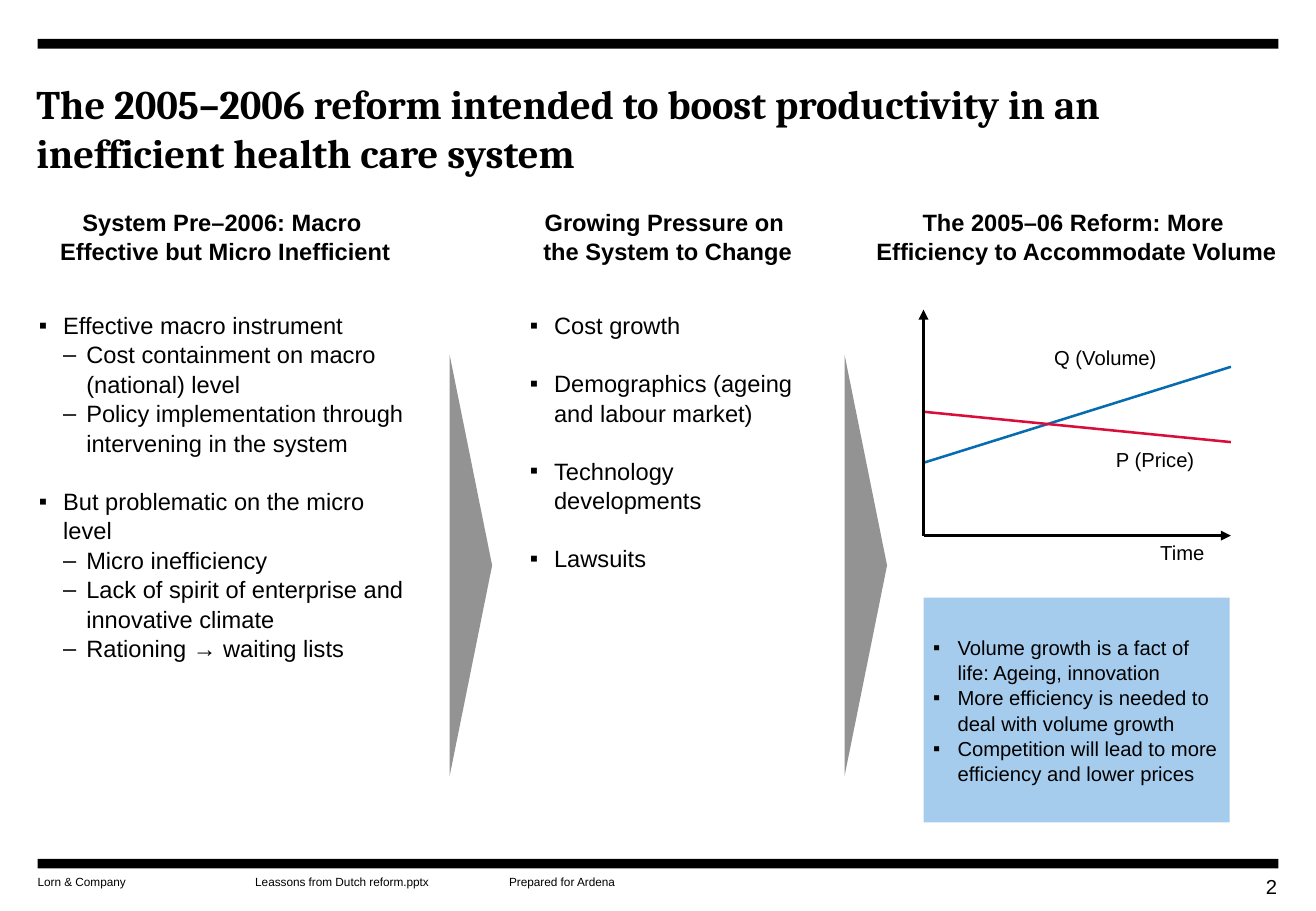
from lxml.etree import SubElement
from pptx import Presentation
from pptx.dml.color import RGBColor
from pptx.enum.shapes import MSO_CONNECTOR as Connector, MSO_SHAPE as Shape
from pptx.enum.text import MSO_ANCHOR as Anchor, PP_ALIGN as Align
from pptx.oxml.ns import qn
from pptx.util import Emu, Pt

EMU_PER_PX = 9144  # 100 px to the inch
BLACK, GREY, LIGHT_BLUE, BLUE, RED = "000000", "939393", "A5CCED", "066BB0", "D90D39"
BULLETS = [("▪", 20, 20), ("–", 39, 19)]  # character, left margin, hanging indent


def px(length):
    return Emu(length * EMU_PER_PX)


def color(hex_string):
    return RGBColor.from_string(hex_string)


def set_values(target, values):
    for name, value in values.items():
        setattr(target, name, value)


class SlideBuilder:
    font = "Arial"
    line_spacing = 1.04

    def __init__(self, slide):
        self.slide = slide

    def add_paragraphs(self, shape, paragraphs, size=14, bold=False, align=Align.LEFT,
                       anchor=Anchor.TOP, margins=(0, 0), wrap=True, font=None,
                       spacing=None):
        """Fill a shape; a paragraph is a text or (text, bullet level, space before in pt)."""
        across, down = map(px, margins)
        frame = shape.text_frame
        set_values(frame, {
            "margin_left": across, "margin_right": across,
            "margin_top": down, "margin_bottom": down,
            "vertical_anchor": anchor, "word_wrap": wrap,
        })
        for index, item in enumerate(paragraphs):
            paragraph = frame.add_paragraph() if index else frame.paragraphs[0]
            text, level, before = (item, None, 0) if isinstance(item, str) else item
            paragraph.text = text
            set_values(paragraph, {
                "alignment": align, "space_before": Pt(before),
                "line_spacing": spacing or self.line_spacing,
            })
            for run in paragraph.runs:
                set_values(run.font, {
                    "name": font or self.font, "size": Pt(size), "bold": bold})
                run.font.color.rgb = color(BLACK)
            if level is not None:
                self.bullet(paragraph, level)

    def bullet(self, paragraph, level):
        character, left, hanging = BULLETS[level]
        paragraph.level = level
        properties = paragraph._p.get_or_add_pPr()
        properties.set("marL", str(px(left)))
        properties.set("indent", str(-px(hanging)))
        SubElement(properties, qn("a:buFont")).set("typeface", self.font)
        SubElement(properties, qn("a:buChar")).set("char", character)

    def text(self, box, paragraphs, **style):
        shape = self.slide.shapes.add_textbox(*map(px, box))
        self.add_paragraphs(shape, paragraphs, **style)

    def shape(self, kind, box, fill, rotation=0):
        shape = self.slide.shapes.add_shape(kind, *map(px, box))
        shape.shadow.inherit = False
        shape.fill.solid()
        shape.fill.fore_color.rgb = color(fill)
        shape.line.fill.background()
        shape.rotation = rotation
        return shape

    def line(self, start, end, stroke, arrow=False):
        connector = self.slide.shapes.add_connector(
            Connector.STRAIGHT, *map(px, start + end))
        connector.line.color.rgb = color(stroke)
        connector.line.width = Pt(1.5)
        properties = connector._element.spPr
        if arrow:
            tail = SubElement(properties.find(qn("a:ln")), qn("a:tailEnd"))
            tail.set("type", "triangle")
        SubElement(properties, qn("a:effectLst"))


def main():
    presentation = Presentation()
    set_values(presentation, {"slide_width": px(1083), "slide_height": px(750)})
    builder = SlideBuilder(presentation.slides.add_slide(presentation.slide_layouts[6]))

    for top in (32, 707):
        builder.shape(Shape.RECTANGLE, (31, top, 1021, 8), BLACK)
    for left, width, footer in (
        (31, 76, "Lorn & Company"),
        (210, 185, "Leassons from Dutch reform.pptx"),
        (419, 93, "Prepared for Ardena"),
    ):
        builder.text((left, 720, width, 12), [footer], size=7)
    builder.text((992, 719, 59, 20), ["2"], size=12, align=Align.RIGHT)

    builder.text(
        (30, 65, 1021, 78),
        ["The 2005–2006 reform intended to boost productivity in an "
         "inefficient health care system"],
        size=24, bold=True, font="Cambria", spacing=1.0)

    for left, width, heading in (
        (49, 273, "System Pre–2006: Macro \vEffective but Micro Inefficient"),
        (447, 205, "Growing Pressure on \vthe System to Change"),
        (721, 330, "The 2005–06 Reform: More \vEfficiency to Accommodate Volume"),
    ):
        builder.text((left, 170, width, 47), [heading],
                     bold=True, align=Align.CENTER, wrap=False)

    builder.text((32, 255, 308, 283), [
        ("Effective macro instrument", 0, 0),
        ("Cost containment on macro (national) level", 1, 0),
        ("Policy implementation through intervening in the system", 1, 0),
        ("But problematic on the micro level", 0, 17),
        ("Micro inefficiency", 1, 0),
        ("Lack of spirit of enterprise and innovative climate", 1, 0),
        ("Rationing → waiting lists", 1, 0),
    ])
    pressures = ["Cost growth", "Demographics (ageing and labour market)",
                 "Technology developments", "Lawsuits"]
    builder.text((436, 255, 228, 212),
                 [(text, 0, 17 if index else 0) for index, text in enumerate(pressures)])

    for left in (214, 539):
        builder.shape(Shape.ISOSCELES_TRIANGLE, (left, 448, 347, 35), GREY, rotation=90)

    conclusions = ["Volume growth is a fact of life: Ageing, innovation",
                   "More efficiency is needed to deal with volume growth",
                   "Competition will lead to more efficiency and lower prices"]
    conclusion_box = builder.shape(Shape.RECTANGLE, (760, 492, 252, 185), LIGHT_BLUE)
    builder.add_paragraphs(conclusion_box, [(text, 0, 0) for text in conclusions],
                           size=12, anchor=Anchor.MIDDLE, margins=(8, 8))

    axis_left, axis_right, axis_bottom = 760, 1013, 441
    for start, end, stroke in ((381, 302, BLUE), (339, 364, RED)):
        builder.line((axis_left, start), (axis_right, end), stroke)
    for end in ((axis_right, axis_bottom), (axis_left, 255)):
        builder.line((axis_left, axis_bottom), end, BLACK, arrow=True)
    for box, label, margins in (
        ((937, 442, 72, 25), "Time", (8, 8)),
        ((908, 364, 90, 27), "P (Price) ", (10, 5)),
        ((857, 280, 110, 27), "Q (Volume) ", (10, 5)),
    ):
        builder.text(box, [label], size=12, align=Align.CENTER,
                     anchor=Anchor.MIDDLE, margins=margins)

    presentation.save("out.pptx")


if __name__ == "__main__":
    main()
